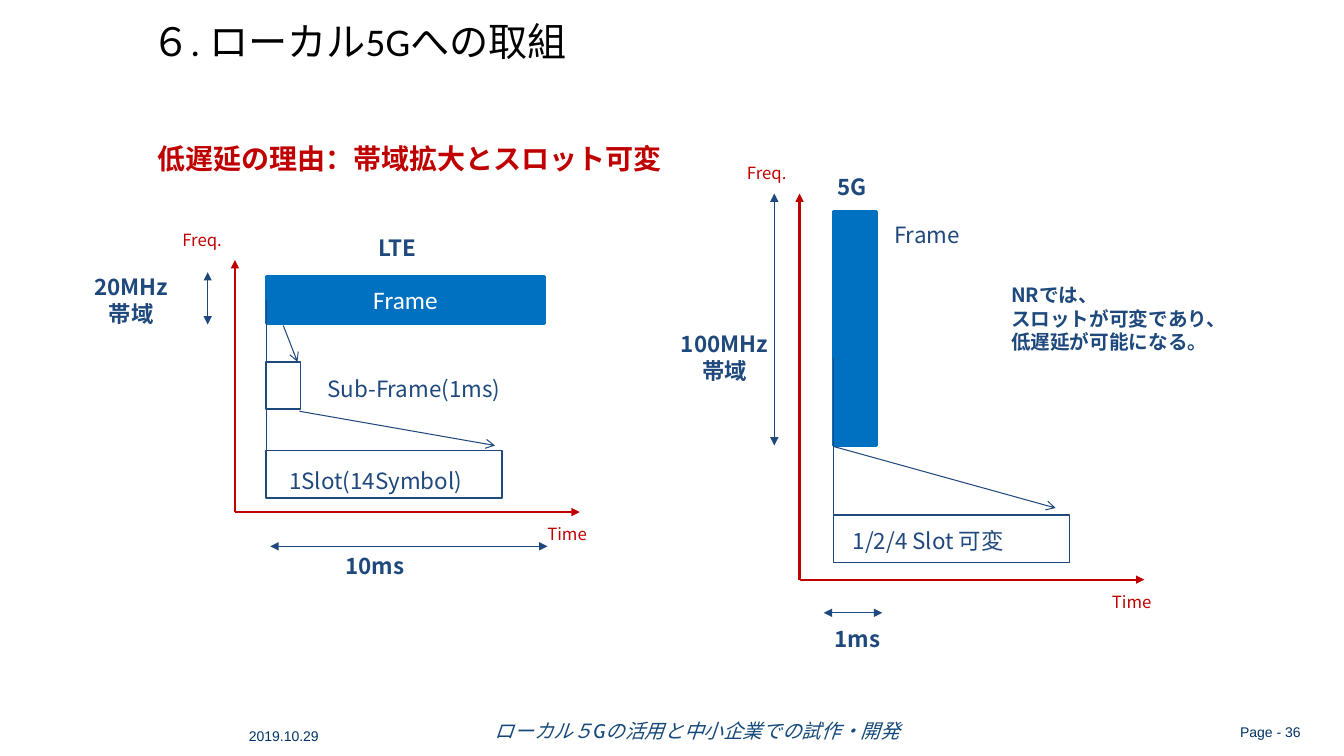
from lxml import etree
from pptx import Presentation
from pptx import util as u
from pptx.dml.color import RGBColor
from pptx.enum import shapes, text
from pptx.oxml.ns import qn

NOTO, CALIBRI, ARIAL = "Noto Sans CJK JP", "Calibri", "Arial"
NAVY, RED, BLUE, WHITE, BLACK = "1F497D", "C00000", "0070C0", "FFFFFF", "000000"
FOOTER_BLUE, FOOTER_NAVY = "154979", "003366"

# Text: (box, wording, format); boxes are left, top, width, height
HEADINGS = [
    ((4.67, 7.08, 4.5, 0.34), "ローカル５Gの活用と中小企業での試作・開発",
     dict(size=14, font="Cabin", color=FOOTER_BLUE, italic=True, center=True)),
    ((2.06, 7.17, 1.51, 0.27), "2019.10.29",
     dict(size=10, font=ARIAL, color=FOOTER_NAVY, center=True)),
    ((12.12, 7.13, 0.96, 0.27), "Page - 36",
     dict(size=10, font=ARIAL, color=FOOTER_NAVY, center=True)),
    ((1.5, 0.17, 5.42, 0.47), "６. ローカル5Gへの取組",
     dict(size=28, font=CALIBRI, color=BLACK, inset=0)),
    ((1.46, 1.35, 7.04, 0.44), "低遅延の理由：帯域拡大とスロット可変",
     dict(size=20, color=RED, bold=True)),
    ((9.93, 2.76, 2.53, 0.81),
     "NRでは、\nスロットが可変であり、\n低遅延が可能になる。", dict(size=14, bold=True)),
]

# One diagram per radio system. Axes: origin x, origin y, time end, freq end
DIAGRAMS = [
    dict(
        axes=(2.33, 5.08, 5.75, 2.58),
        frame=(2.64, 2.74, 2.76, 0.47), frame_text="Frame",
        spans=[(2.68, 5.42, 5.43, 5.42), (2.06, 3.22, 2.06, 2.7)],
        guide=(2.64, 2.98, 2.64, 4.93),
        zooms=[(2.81, 3.23, 2.95, 3.59), (2.97, 4.08, 4.91, 4.42)],
        boxes=[(2.64, 3.59, 0.34, 0.47), (2.64, 4.47, 2.34, 0.47)],
        bold=[((3.66, 2.27, 1.14, 0.37), "LTE"), ((3.33, 5.43, 1.14, 0.37), "10ms")],
        band=((0.73, 2.66, 1.14, 0.64), "20MHz帯域"),
        plain=[((3.15, 3.67, 2.19, 0.37), "Sub-Frame(1ms)"),
               ((2.77, 4.59, 2.11, 0.37), "1Slot(14Symbol)")],
    ),
    dict(
        axes=(7.93, 5.75, 11.35, 1.92),
        frame=(8.27, 2.1, 0.42, 2.32), frame_text="",
        spans=[(8.17, 6.08, 8.75, 6.08), (7.68, 4.42, 7.68, 1.92)],
        guide=(8.27, 3.55, 8.27, 5.5),
        zooms=[(8.27, 4.43, 10.47, 5.04)],
        boxes=[(8.27, 5.11, 2.34, 0.47)],
        bold=[((8.21, 1.67, 1.14, 0.37), "5G"), ((8.18, 6.15, 1.14, 0.37), "1ms")],
        band=((6.56, 3.23, 1.25, 0.64), "100MHz帯域"),
        plain=[((8.77, 2.14, 1.14, 0.37), "Frame"),
               ((8.36, 5.18, 2.11, 0.37), "1/2/4 Slot 可変")],
    ),
]

prs = Presentation()
prs.slide_width, prs.slide_height = u.Inches(13.33), u.Inches(7.5)
s = prs.slides.add_slide(prs.slide_layouts[6])


def rgb(color):
    return RGBColor.from_string(color)


def inches(values):
    return [u.Inches(v) for v in values]


def write(sp, wording, size=16, font=NOTO, color=NAVY, bold=False, italic=False,
          center=False, middle=False, inset=None):
    tf = sp.text_frame
    tf.word_wrap = True
    tf.vertical_anchor = text.MSO_ANCHOR.MIDDLE if middle else text.MSO_ANCHOR.TOP
    if inset is not None:
        tf.margin_left = tf.margin_right = tf.margin_top = tf.margin_bottom = u.Inches(inset)
    for i, line in enumerate(wording.split("\n")):
        p = tf.add_paragraph() if i else tf.paragraphs[0]
        p.alignment = text.PP_ALIGN.CENTER if center else text.PP_ALIGN.LEFT
        r = p.add_run()
        r.text = line
        f = r.font
        f.size, f.name, f.bold, f.italic = u.Pt(size), font, bold, italic
        f.color.rgb = rgb(color)
        etree.SubElement(r._r.get_or_add_rPr(), qn("a:ea"), typeface=font)


def label(box, wording, **fmt):
    write(s.shapes.add_textbox(*inches(box)), wording, **fmt)


def rect(box, fill, line, width):
    sp = s.shapes.add_shape(shapes.MSO_SHAPE.RECTANGLE, *inches(box))
    sp.shadow.inherit = False
    sp.fill.solid()
    sp.fill.fore_color.rgb = rgb(fill)
    sp.line.color.rgb = rgb(line)
    sp.line.width = u.Pt(width)
    return sp


def connect(ends, color=NAVY, width=0.75, head=None, tail=None):
    c = s.shapes.add_connector(shapes.MSO_CONNECTOR.STRAIGHT, *inches(ends))
    c.line.color.rgb = rgb(color)
    c.line.width = u.Pt(width)
    ln = c.line._get_or_add_ln()
    for tag, kind in (("a:headEnd", head), ("a:tailEnd", tail)):
        if kind:
            etree.SubElement(ln, qn(tag), type=kind)
    etree.SubElement(c._element.spPr, qn("a:effectLst"))


for box, wording, fmt in HEADINGS:
    label(box, wording, **fmt)

for d in DIAGRAMS:
    frame = rect(d["frame"], BLUE, BLUE, 2)
    if d["frame_text"]:
        write(frame, d["frame_text"], size=18, font=CALIBRI, color=WHITE,
              center=True, middle=True)

    x, y, time_end, freq_end = d["axes"]
    for end in ((time_end, y), (x, freq_end)):
        connect((x, y, *end), RED, 1.5, tail="triangle")
    label((time_end - 0.42, y + 0.07, 0.75, 0.3), "Time", size=12, color=RED)
    label((x - 0.62, freq_end - 0.35, 0.75, 0.3), "Freq.", size=12, color=RED)

    for span in d["spans"]:
        connect(span, head="triangle", tail="triangle")
    connect(d["guide"])
    for zoom in d["zooms"]:
        connect(zoom, tail="arrow")
    for box in d["boxes"]:
        rect(box, WHITE, NAVY, 1)

    for box, wording in d["bold"]:
        label(box, wording, bold=True)
    label(*d["band"], bold=True, center=True)
    for box, wording in d["plain"]:
        label(box, wording)

prs.save("out.pptx")
